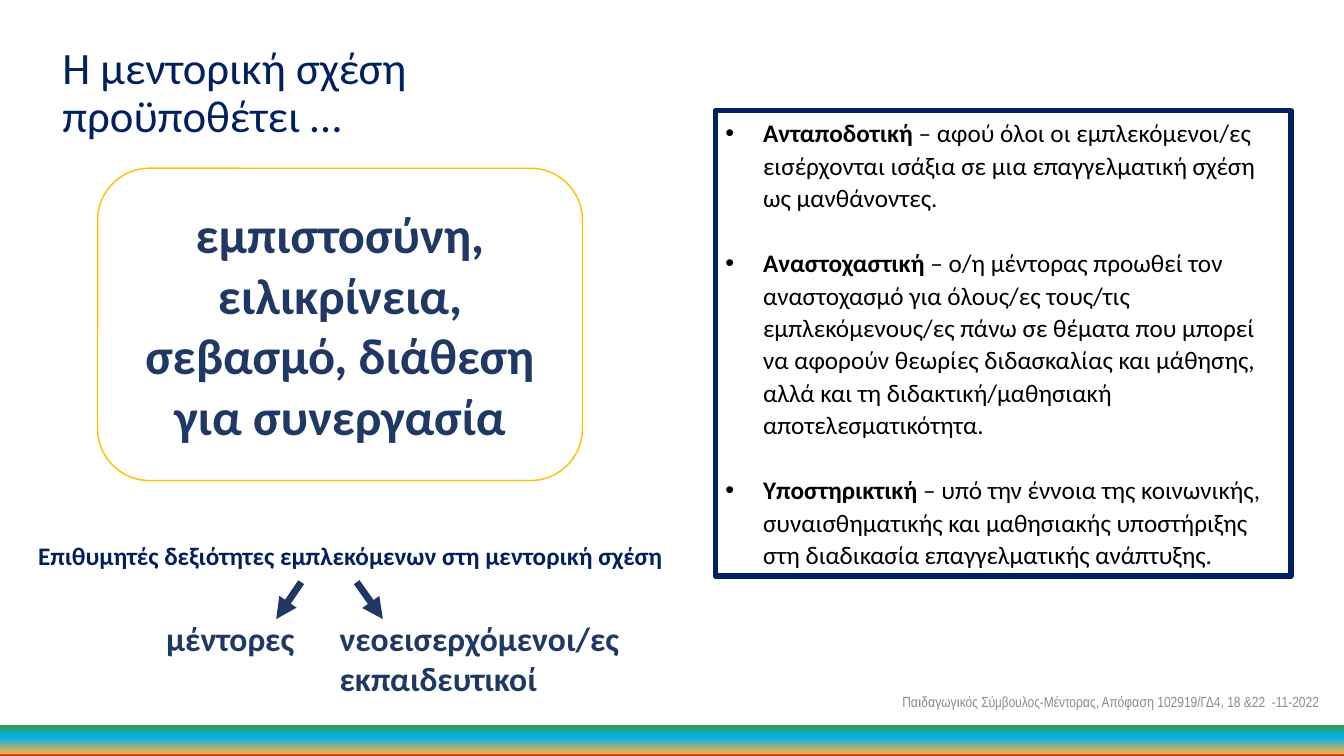
from dataclasses import dataclass
from lxml.etree import SubElement
from pptx import Presentation
from pptx.dml.color import RGBColor
from pptx.enum.shapes import MSO_CONNECTOR, MSO_SHAPE
from pptx.enum.text import MSO_ANCHOR, MSO_AUTO_SIZE, PP_ALIGN
from pptx.oxml.ns import qn
from pptx.util import Cm, Pt


@dataclass(frozen=True)
class Theme:
    navy: str = "002060"
    slate: str = "203864"
    gold: str = "FFC000"
    white: str = "FFFFFF"
    black: str = "000000"
    grey: str = "8C8C8C"
    strip: tuple = ((0, "399A48"), (39, "00B0F0"), (93, "FBB03B"), (96, "CC3333"))
    face: str = "Calibri"
    narrow_face: str = "Arial Narrow"
    values_size: float = 36
    title_size: float = 32
    role_size: float = 24
    body_size: float = 18
    source_size: float = 10.5


@dataclass(frozen=True)
class Box:
    """A rectangle in centimetres."""
    left: float
    top: float
    width: float
    height: float

    def inner(self, dx, dy, width, height):
        return Box(self.left + dx, self.top + dy, width, height)

    def lengths(self):
        return Cm(self.left), Cm(self.top), Cm(self.width), Cm(self.height)


THEME = Theme()
TITLE = "Η μεντορική σχέση προϋποθέτει …"
VALUES = "εμπιστοσύνη, ειλικρίνεια, σεβασμό, διάθεση για συνεργασία"
SKILLS = "Επιθυμητές δεξιότητες εμπλεκόμενων στη μεντορική σχέση"
SOURCE = "Παιδαγωγικός Σύμβουλος-Μέντορας, Απόφαση 102919/ΓΔ4, 18 &22  -11-2022"
QUALITIES = (
    ("Ανταποδοτική", " – αφού όλοι οι εμπλεκόμενοι/ες εισέρχονται ισάξια σε μια "
     "επαγγελματική σχέση ως μανθάνοντες."),
    ("Αναστοχαστική", " – ο/η μέντορας προωθεί τον αναστοχασμό για όλους/ες τους/τις "
     "εμπλεκόμενους/ες πάνω σε θέματα που μπορεί να αφορούν θεωρίες διδασκαλίας και "
     "μάθησης, αλλά και τη διδακτική/μαθησιακή αποτελεσματικότητα."),
    ("Υποστηρικτική", " – υπό την έννοια της κοινωνικής, συναισθηματικής και μαθησιακής "
     "υποστήριξης στη διαδικασία επαγγελματικής ανάπτυξης."),
)


def apply_format(target, values):
    for name, value in values.items():
        setattr(target, name, value)


def add_run(paragraph, text, size, color, bold=False, face=THEME.face):
    run = paragraph.add_run()
    run.text = text
    apply_format(run.font, {"name": face, "size": Pt(size), "bold": bold})
    run.font.color.rgb = RGBColor.from_string(color)


def prepare_frame(shape, anchor=MSO_ANCHOR.TOP):
    apply_format(shape.text_frame, {"word_wrap": True, "auto_size": MSO_AUTO_SIZE.NONE,
                                    "vertical_anchor": anchor})
    return shape.text_frame


def add_label(slide, box, text, size, color, bold=True, face=THEME.face,
              anchor=MSO_ANCHOR.TOP):
    frame = prepare_frame(slide.shapes.add_textbox(*box.lengths()), anchor)
    add_run(frame.paragraphs[0], text, size, color, bold, face)


def add_panel(slide, box, kind, fill=None, line=None, width=1):
    panel = slide.shapes.add_shape(kind, *box.lengths())
    panel.shadow.inherit = False
    if fill:
        panel.fill.solid()
        panel.fill.fore_color.rgb = RGBColor.from_string(fill)
    else:
        panel.fill.background()
    if line:
        panel.line.color.rgb = RGBColor.from_string(line)
        panel.line.width = Pt(width)
    else:
        panel.line.fill.background()
    return panel


def add_arrow(slide, start, end):
    ends = [Cm(length) for length in (*start, *end)]
    arrow = slide.shapes.add_connector(MSO_CONNECTOR.STRAIGHT, *ends)
    arrow.line.color.rgb = RGBColor.from_string(THEME.slate)
    arrow.line.width = Pt(5)
    properties = arrow.element.spPr
    SubElement(properties.find(qn("a:ln")), qn("a:tailEnd"), type="triangle")
    SubElement(properties, qn("a:effectLst"))


def fill_title(slide, box):
    title = slide.shapes.title
    apply_format(title, dict(zip(("left", "top", "width", "height"), box.lengths())))
    paragraph = prepare_frame(title).paragraphs[0]
    apply_format(paragraph, {"alignment": PP_ALIGN.LEFT, "line_spacing": 0.9})
    add_run(paragraph, TITLE, THEME.title_size, THEME.navy)


def add_values(slide, box):
    panel = add_panel(slide, box, MSO_SHAPE.ROUNDED_RECTANGLE, THEME.white, THEME.gold)
    paragraph = prepare_frame(panel, MSO_ANCHOR.MIDDLE).paragraphs[0]
    paragraph.alignment = PP_ALIGN.CENTER
    add_run(paragraph, VALUES, THEME.values_size, THEME.slate, bold=True)


def add_qualities(slide, box):
    """Framed list of the qualities of the mentoring relationship."""
    frame = prepare_frame(add_panel(slide, box, MSO_SHAPE.RECTANGLE,
                                    line=THEME.navy, width=4))
    for index, (quality, meaning) in enumerate(QUALITIES):
        paragraph = frame.add_paragraph() if index else frame.paragraphs[0]
        apply_format(paragraph, {"alignment": PP_ALIGN.LEFT, "line_spacing": 1.07,
                                 "space_before": Pt(23.5 if index else 0)})
        properties = paragraph._p.get_or_add_pPr()
        indent = Cm(0.95)
        properties.set("marL", str(indent))
        properties.set("indent", str(-indent))
        bullet_color = SubElement(properties, qn("a:buClr"))
        SubElement(bullet_color, qn("a:srgbClr"), val=THEME.black)
        SubElement(properties, qn("a:buFont"), typeface="Arial")
        SubElement(properties, qn("a:buChar"), char="•")
        add_run(paragraph, quality, THEME.body_size, THEME.black, bold=True)
        add_run(paragraph, meaning, THEME.body_size, THEME.black)


def add_skills(slide, box):
    """Skills heading with an arrow to each of the two roles."""
    add_label(slide, box.inner(0, 0, 16.54, 1.02), SKILLS, THEME.body_size, THEME.navy)
    roles = (("μέντορες", 3.23, 3.91, 6.88, 6.25),
             ("νεοεισερχόμενοι/ες εκπαιδευτικοί", 7.6, 9.75, 8.28, 8.94))
    for role, dx, width, start, end in roles:
        add_label(slide, box.inner(dx, 1.95, width, box.height - 1.95), role,
                  THEME.role_size, THEME.slate)
        add_arrow(slide, (box.left + start, box.top + 1.18),
                  (box.left + end, box.top + 2.11))


def add_footer(slide, box):
    """Source line at the right, above a gradient strip along the bottom."""
    strip_height = 0.79
    strip = add_panel(slide, box.inner(0, box.height - strip_height, box.width,
                                       strip_height), MSO_SHAPE.RECTANGLE)
    strip.fill.gradient()
    strip.fill.gradient_angle = 270
    stops = strip.element.spPr.find(qn("a:gradFill")).find(qn("a:gsLst"))
    for stop in list(stops):
        stops.remove(stop)
    for percent, color in THEME.strip:
        stop = SubElement(stops, qn("a:gs"), pos=str(percent * 1000))
        SubElement(stop, qn("a:srgbClr"), val=color)
    source_width = 11.38
    add_label(slide, box.inner(box.width - source_width, 0, source_width, 1.02), SOURCE,
              THEME.source_size, THEME.grey, False, THEME.narrow_face, MSO_ANCHOR.MIDDLE)


def main():
    deck = Presentation()
    apply_format(deck, {"slide_width": Cm(33.87), "slide_height": Cm(19.05)})
    slide = deck.slides.add_slide(deck.slide_layouts.get_by_name("Title Only"))
    add_qualities(slide, Box(18.03, 2.79, 14.5, 11.73))
    fill_title(slide, Box(1.32, 1.02, 13.08, 3.53))
    add_values(slide, Box(2.46, 4.24, 12.22, 7.87))
    add_footer(slide, Box(0, 17.17, 33.87, 1.88))
    add_skills(slide, Box(0.71, 13.49, 17.35, 4.26))
    deck.save("out.pptx")


if __name__ == "__main__":
    main()
